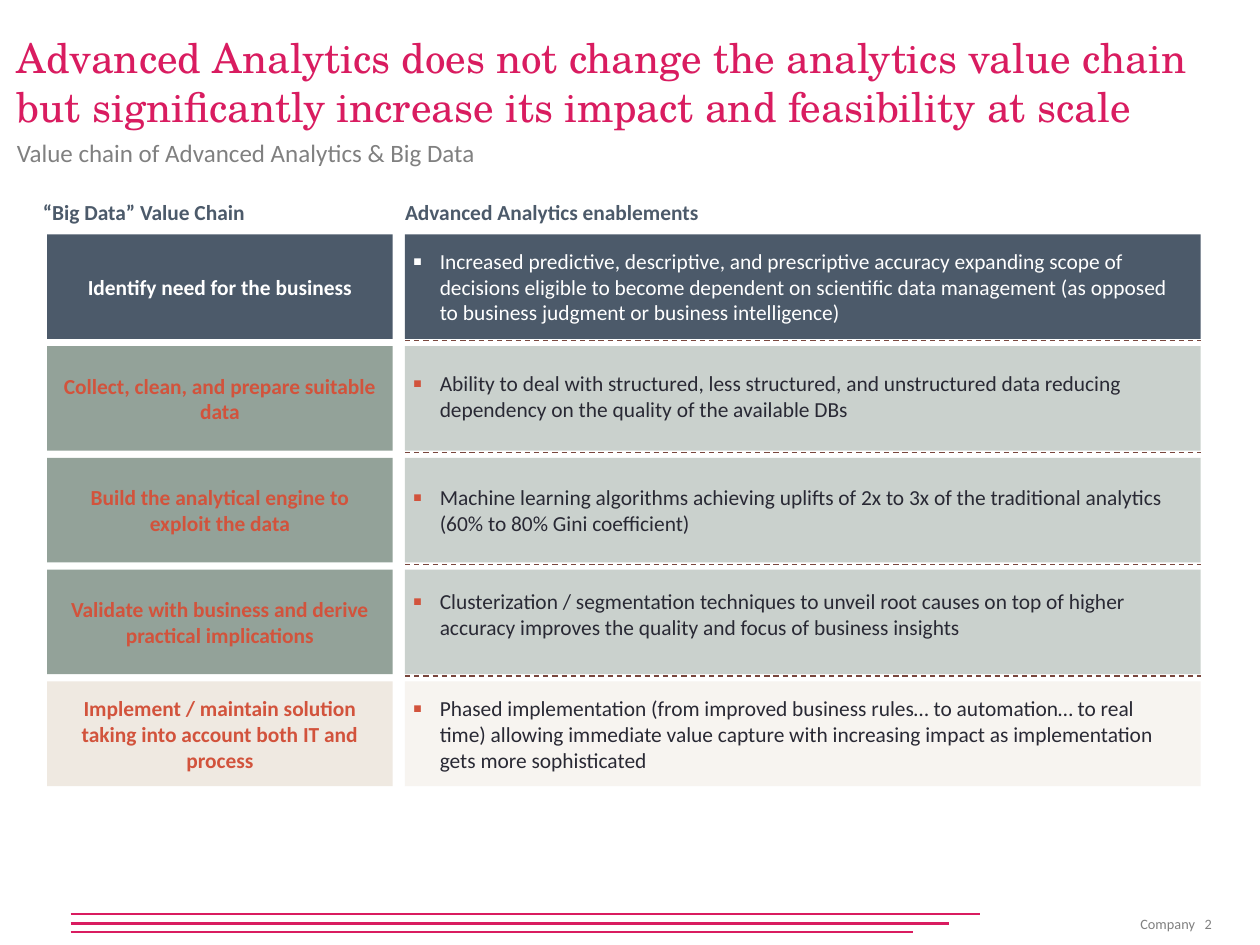
from lxml.etree import SubElement as Sub
from pptx import Presentation
from pptx.dml.color import RGBColor as RGB
from pptx.enum.dml import MSO_LINE as Dash
from pptx.enum.shapes import MSO_CONNECTOR as Conn, MSO_SHAPE as Shape
from pptx.enum.text import MSO_ANCHOR as Anchor, MSO_AUTO_SIZE as Auto, PP_ALIGN as Align
from pptx.oxml.ns import qn
from pptx.util import Pt

COLORS = {
    "pink": "D91C60", "gray": "808080", "slate": "4C5A6A", "sage": "93A299",
    "sand": "EFE9E1", "rust": "D2533C", "brown": "79463D", "ink": "292934",
    "white": "FFFFFF",
}

# label, label width, enablement, space below it, fill, label colour, text colour
ROWS = [
    ("Identify need for the business", 168,
     "Increased predictive, descriptive, and prescriptive accuracy expanding scope of "
     "decisions eligible to become dependent on scientific data management (as opposed "
     "to business judgment or business intelligence)",
     0, "slate", "white", "white"),
    ("Collect, clean, and prepare suitable data", 194,
     "Ability to deal with structured, less structured, and unstructured data reducing "
     "dependency on the quality of the available DBs",
     3, "sage", "rust", "ink"),
    ("Build the analytical engine to exploit the data", 168,
     "Machine learning algorithms achieving uplifts of 2x to 3x of the traditional "
     "analytics (60% to 80% Gini coefficient)",
     0, "sage", "rust", "ink"),
    ("Validate with business and derive practical implications", 182,
     "Clusterization / segmentation techniques to unveil root causes on top of higher "
     "accuracy improves the quality and focus of business insights",
     9, "sage", "rust", "ink"),
    ("Implement / maintain solution taking into account both IT and process", 186,
     "Phased implementation (from improved business rules… to automation… to real time) "
     "allowing immediate value capture with increasing impact as implementation gets "
     "more sophisticated",
     0, "sand", "rust", "ink"),
]
TOP, STEP, TALL = 131.2, 62.6, 58.6
LEFT, WIDE = 26.4, 193.6
RIGHT, SPAN = 226.8, 445.6


def write(shape, text, size, color, bold=False, align=Align.LEFT, face="Calibri",
          insets=(0, 0, 0, 0), anchor=Anchor.TOP, wrap=True, bullet=None):
    """Fill a shape with one styled paragraph; insets run left, top, right, bottom."""
    frame = shape.text_frame
    frame.auto_size = Auto.NONE
    frame.word_wrap = wrap
    frame.vertical_anchor = anchor
    (frame.margin_left, frame.margin_top,
     frame.margin_right, frame.margin_bottom) = map(Pt, insets)
    par = frame.paragraphs[0]
    par.text = text
    par.alignment = align
    if bullet:
        props = par._p.get_or_add_pPr()
        props.set("marL", str(Pt(15.1)))
        props.set("indent", str(-Pt(15.1)))
        Sub(Sub(props, qn("a:buClr")), qn("a:srgbClr"), val=COLORS[bullet])
        Sub(props, qn("a:buSzPct"), val="125000")
        Sub(props, qn("a:buFont"), typeface="Arial")
        Sub(props, qn("a:buChar"), char="▪")
    font = par.font
    font.name, font.size, font.bold = face, Pt(size), bold
    font.color.rgb = RGB.from_string(COLORS[color])


def rule(x, y, end, color, width):
    line = slide.shapes.add_connector(Conn.STRAIGHT, Pt(x), Pt(y), Pt(end), Pt(y))
    line.line.color.rgb = RGB.from_string(COLORS[color])
    line.line.width = Pt(width)
    Sub(line._element.spPr, qn("a:effectLst"))
    return line


deck = Presentation()
deck.slide_width, deck.slide_height = Pt(705.6), Pt(529.2)
slide = deck.slides.add_slide(deck.slide_layouts[5])

title = slide.shapes.title
title.left, title.top, title.width, title.height = Pt(9.4), Pt(18), Pt(679), Pt(55.4)
write(title, "Advanced Analytics does not change the analytics value chain but "
      "significantly increase its impact and feasibility at scale",
      23, "pink", face="TeX Gyre Schola")

# Subtitle, column heads and footer
for text, x, y, w, h, size, color, bold in [
    ("Value chain of Advanced Analytics & Big Data", 9.4, 77, 679, 17, 14, "gray", False),
    ("“Big Data” Value Chain", 24, 111.6, 133, 14.4, 12, "slate", True),
    ("Advanced Analytics enablements", RIGHT, 111.6, 190, 14.4, 12, "slate", True),
    ("Company", 638.6, 512.6, 28, 9.4, 8, "gray", False),
    ("2", 674.6, 512.6, 10, 9.4, 8, "gray", False),
]:
    box = slide.shapes.add_textbox(Pt(x), Pt(y), Pt(w), Pt(h))
    write(box, text, size, color, bold, wrap=False)

for i, (label, width, text, below, fill, tone, ink) in enumerate(ROWS):
    y = TOP + i * STEP
    side = (WIDE - width) / 2
    stage = slide.shapes.add_shape(Shape.RECTANGLE, Pt(LEFT), Pt(y), Pt(WIDE), Pt(TALL))
    panel = slide.shapes.add_shape(Shape.RECTANGLE, Pt(RIGHT), Pt(y), Pt(SPAN), Pt(TALL))
    for rect in (stage, panel):
        rect.shadow.inherit = False
        rect.fill.solid()
        rect.fill.fore_color.rgb = RGB.from_string(COLORS[fill])
        rect.line.fill.background()
    if fill != "slate":
        Sub(panel._element.spPr.find(".//" + qn("a:srgbClr")), qn("a:alpha"), val="49000")
    write(stage, label, 12, tone, True, Align.CENTER,
          insets=(side, 0, side, 0), anchor=Anchor.MIDDLE)
    write(panel, text, 12, ink, insets=(4.4, 0, 11.4, below), anchor=Anchor.MIDDLE,
          bullet=tone)
    if i:
        rule(RIGHT, y - 3, RIGHT + SPAN, "brown", 0.75).line.dash_style = Dash.DASH

for y, end in [(511.9, 548.6), (517, 531.4), (522, 511.4)]:
    rule(39.6, y, end, "pink", 1.5)

deck.save("out.pptx")
